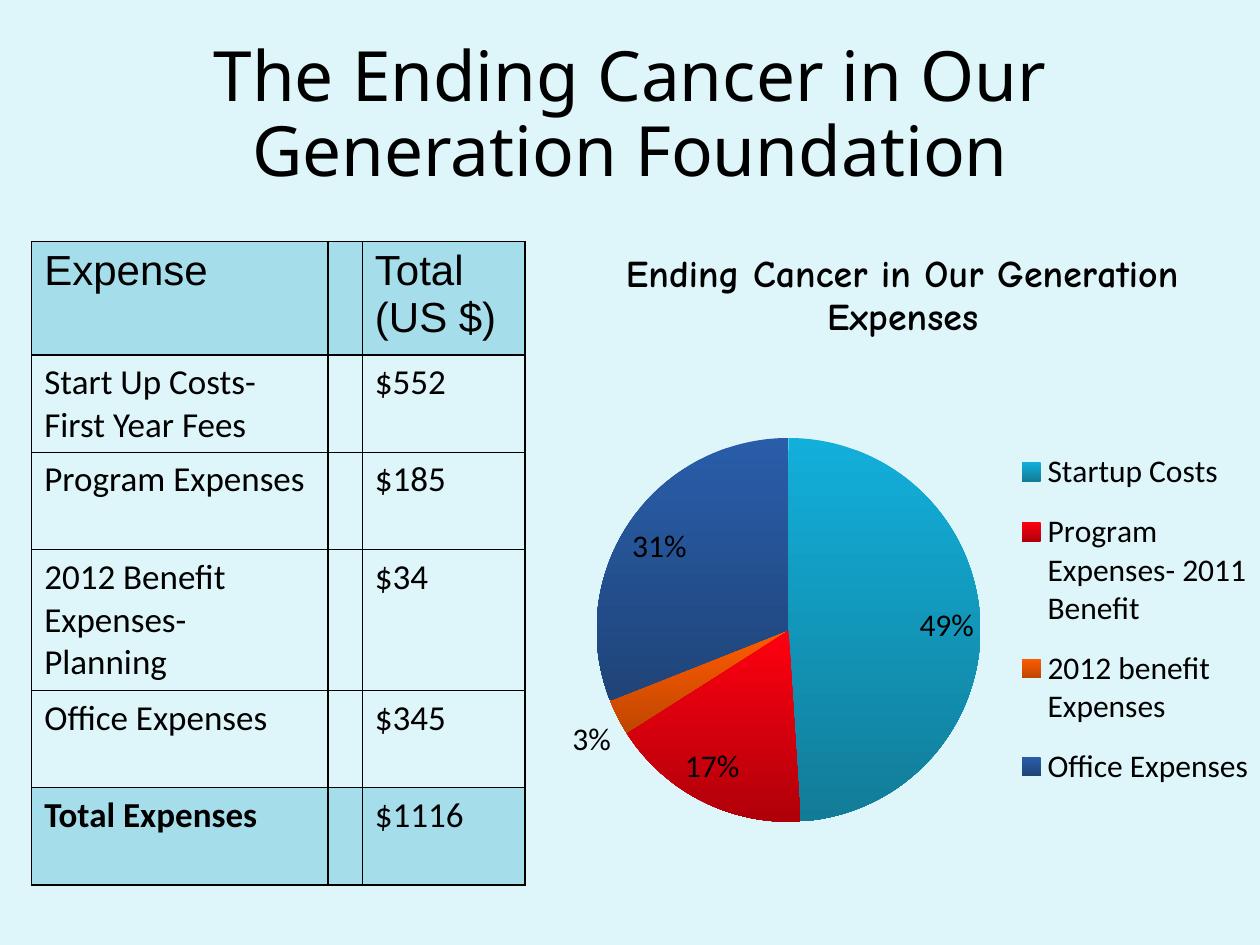
import pptx
import pptx.chart.data
import pptx.dml.color
import pptx.enum.chart
import pptx.enum.text
import pptx.oxml
import pptx.oxml.ns
import pptx.util

Cm = pptx.util.Cm
Pt = pptx.util.Pt
qn = pptx.oxml.ns.qn

HEADING = "Ending Cancer in Our Generation Expenses"
BAND = "A6DDEA"
EXPENSES = [
    ("Expense", "Total (US $)", 2.15),
    ("Start Up Costs- First Year Fees", "$552", 1.96),
    ("Program Expenses", "$185", 1.96),
    ("2012 Benefit Expenses- Planning", "$34", 2.84),
    ("Office Expenses", "$345", 1.96),
    ("Total Expenses", "$1116", 1.96),
]
SHARES = [
    ("Startup Costs", 49, "12AFDA", "127C98"),
    ("Program Expenses- 2011 Benefit", 17, "FF0010", "B0000A"),
    ("2012 benefit Expenses", 3, "FF5C00", "C04600"),
    ("Office Expenses", 31, "295DAA", "1F4478"),
]


def color(value):
    return pptx.dml.color.RGBColor.from_string(value)


def apply_format(target, values):
    for name, value in values.items():
        setattr(target, name, value)


def style_font(font, name, size, bold=False):
    apply_format(font, {"name": name, "size": Pt(size), "bold": bold})
    font.color.rgb = color("000000")


def add_border(cell):
    properties = cell._tc.get_or_add_tcPr()
    for position, side in enumerate(("lnL", "lnR", "lnT", "lnB")):
        line = pptx.oxml.parse_xml(
            f'<a:{side} {pptx.oxml.ns.nsdecls("a")} w="12700"><a:solidFill>'
            f'<a:srgbClr val="000000"/></a:solidFill></a:{side}>'
        )
        properties.insert(position, line)


def set_layout(parent, position, inner, x, y, w, h):
    for existing in parent.findall(qn("c:layout")):
        parent.remove(existing)
    target = '<c:layoutTarget val="inner"/>' if inner else ""
    parent.insert(position, pptx.oxml.parse_xml(
        f'<c:layout {pptx.oxml.ns.nsdecls("c")}><c:manualLayout>{target}'
        '<c:xMode val="edge"/><c:yMode val="edge"/>'
        f'<c:x val="{x}"/><c:y val="{y}"/><c:w val="{w}"/><c:h val="{h}"/>'
        '</c:manualLayout></c:layout>'
    ))


def add_title(slide, left, top, width, height):
    title = slide.shapes.add_textbox(left, top, width, height).text_frame
    apply_format(title, {
        "word_wrap": True,
        "vertical_anchor": pptx.enum.text.MSO_ANCHOR.MIDDLE,
        "text": "The Ending Cancer in Our Generation Foundation",
    })
    paragraph = title.paragraphs[0]
    apply_format(paragraph, {
        "alignment": pptx.enum.text.PP_ALIGN.CENTER, "line_spacing": 0.9,
    })
    style_font(paragraph.runs[0].font, "Noto Sans", 39.6)


def add_expense_table(slide, left, top, width, height):
    table = slide.shapes.add_table(len(EXPENSES), 3, left, top, width, height).table
    apply_format(table, {"first_row": False, "horz_banding": False})
    for column, share in zip(table.columns, (0.6, 0.07, 0.33)):
        column.width = int(width * share)
    last = len(EXPENSES) - 1
    for index, (expense, total, row_height) in enumerate(EXPENSES):
        table.rows[index].height = Cm(row_height)
        for column, text in enumerate((expense, "", total)):
            cell = table.cell(index, column)
            if index in (0, last):
                cell.fill.solid()
                cell.fill.fore_color.rgb = color(BAND)
            else:
                cell.fill.background()
            add_border(cell)
            if text:
                cell.text = text
                font = cell.text_frame.paragraphs[0].runs[0].font
                name, size = ("Arial", 24) if index == 0 else ("Calibri", 20)
                style_font(font, name, size, index == last and column == 0)


def add_expense_chart(slide, left, top, width, height):
    data = pptx.chart.data.CategoryChartData()
    data.categories = [share[0] for share in SHARES]
    data.add_series(HEADING, [share[1] for share in SHARES])
    chart = slide.shapes.add_chart(
        pptx.enum.chart.XL_CHART_TYPE.PIE, left, top, width, height, data
    ).chart
    style_font(chart.font, "Calibri", 18)
    chart.has_title = True
    heading = chart.chart_title.text_frame
    heading.text = HEADING
    style_font(heading.paragraphs[0].runs[0].font, "Comic Neue", 21.6, True)

    chart.has_legend = True
    apply_format(chart.legend, {
        "position": pptx.enum.chart.XL_LEGEND_POSITION.RIGHT,
        "include_in_layout": False,
    })
    set_layout(chart.legend._element, 1, False, 0.65, 0.29, 0.35, 0.52)

    pie = chart.plots[0]
    apply_format(pie, {"vary_by_categories": True, "has_data_labels": True})
    apply_format(pie.data_labels, {
        "show_percentage": True,
        "show_value": False,
        "number_format": "0%",
        "number_format_is_linked": False,
        "position": pptx.enum.chart.XL_LABEL_POSITION.BEST_FIT,
    })
    style_font(pie.data_labels.font, "Calibri", 18)
    set_layout(pie._element.getparent(), 0, True, 0.07, 0.3, 0.54, 0.53)
    for index, (_, _, light, dark) in enumerate(SHARES):
        slice_format = pie.series[0].points[index].format
        slice_format.fill.gradient()
        slice_format.fill.gradient_angle = 270
        for stop, shade in zip(slice_format.fill.gradient_stops, (light, dark)):
            stop.color.rgb = color(shade)
        slice_format.line.fill.background()


def main():
    presentation = pptx.Presentation()
    apply_format(presentation, {"slide_width": Cm(25.4), "slide_height": Cm(19.05)})
    slide = presentation.slides.add_slide(presentation.slide_layouts[6])
    slide.background.fill.solid()
    slide.background.fill.fore_color.rgb = color("DEF5FA")
    add_title(slide, Cm(1.27), Cm(0.76), Cm(22.86), Cm(3.18))
    add_expense_chart(slide, Cm(11), Cm(4.45), Cm(14.4), Cm(14.6))
    add_expense_table(slide, Cm(0.64), Cm(4.87), Cm(9.95), Cm(12.83))
    presentation.save("out.pptx")


if __name__ == "__main__":
    main()
